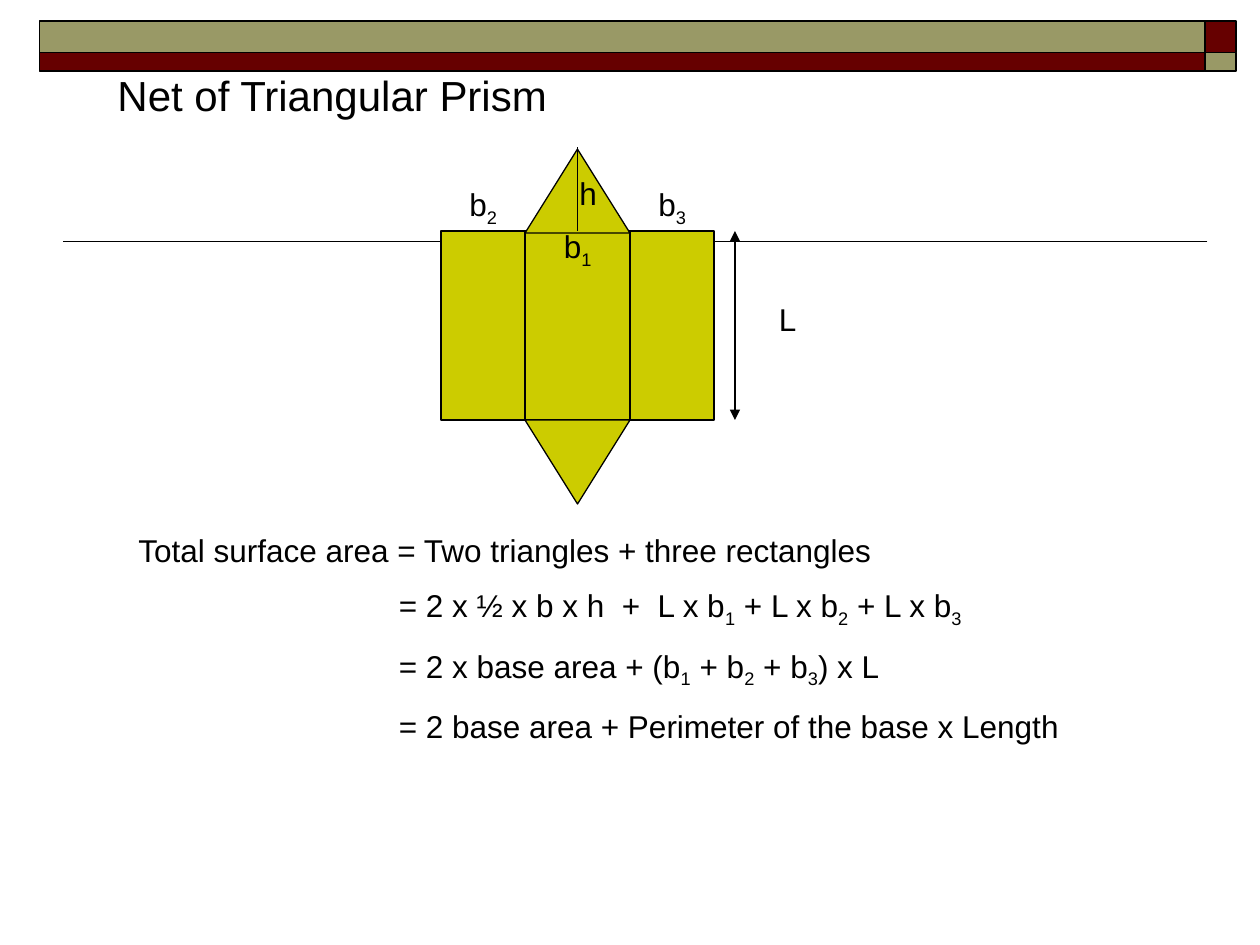
from dataclasses import dataclass

from lxml import etree
from pptx import Presentation
from pptx import util as u
from pptx.dml.color import RGBColor
from pptx.enum import shapes, text
from pptx.oxml import ns

COLS, ROWS = 120, 90
WIDTH, HEIGHT = u.Inches(10), u.Inches(7.5)
BLACK = RGBColor(0x00, 0x00, 0x00)
MAROON = RGBColor(0x66, 0x00, 0x00)
KHAKI = RGBColor(0x99, 0x99, 0x66)
YELLOW = RGBColor(0xCC, 0xCC, 0x00)
RECT = shapes.MSO_SHAPE.RECTANGLE
TRIANGLE = shapes.MSO_SHAPE.ISOSCELES_TRIANGLE


@dataclass(frozen=True)
class Face:
    """A filled outline placed in columns and rows."""
    col: float
    row: float
    cols: float
    rows: float
    color: RGBColor = YELLOW
    kind: shapes.MSO_SHAPE = RECT
    turn: float = 0
    line: float = 0.75


@dataclass(frozen=True)
class Line:
    """A straight line between two grid points."""
    start: tuple[float, float]
    end: tuple[float, float]
    weight: float = 0.75
    arrow: bool = False


@dataclass(frozen=True)
class Label:
    """A short caption with its left inset in columns."""
    words: str
    col: float
    row: float
    cols: float
    inset: float = 1.2


BANDS = [Face(col, row, cols, rows, color, line=1)
         for row, rows, colors in ((2, 3, (KHAKI, MAROON)), (5, 1.8, (MAROON, KHAKI)))
         for col, cols, color in zip((3.75, 114.75), (111, 3), colors)]
MIDDLE = Face(50, 22, 10, 18)
FACES = [Face(60, 22, 8, 18), Face(42, 22, 8, 18),
         Face(50, 14.2, 10, 8, kind=TRIANGLE),
         Face(50, 40, 10, 8, kind=TRIANGLE, turn=180)]
RULE = Line((115, 23), (6, 23), weight=1)
ALTITUDE = Line((55, 22), (55, 14))
ARROWS = [Line((70, 30), (70, 40), arrow=True), Line((70, 31), (70, 22), arrow=True)]
LABELS = [Label("L", 73, 28, 5), Label("b_1", 50, 21, 9, 3.7), Label("h", 54, 16, 5),
          Label("b_2", 41, 17, 9, 3.7), Label("b_3", 59, 17, 9, 3.7)]
FORMULA = ["Total surface area = Two triangles + three rectangles",
           "= 2 x ½ x b x h  +  L x b_1 + L x b_2 + L x b_3",
           "= 2 x base area + (b_1 + b_2 + b_3) x L",
           "= 2 base area + Perimeter of the base x Length"]


def x(cols: float) -> int:
    """Convert columns to a length."""
    return round(WIDTH * cols / COLS)


def y(rows: float) -> int:
    """Convert rows to a length."""
    return round(HEIGHT * rows / ROWS)


def draw_face(slide, face: Face):
    """Draw one face and return its shape."""
    sp = slide.shapes.add_shape(face.kind, x(face.col), y(face.row), x(face.cols), y(face.rows))
    sp.shadow.inherit = False
    sp.rotation = face.turn
    sp.fill.solid()
    sp.fill.fore_color.rgb = face.color
    sp.line.color.rgb = BLACK
    sp.line.width = u.Pt(face.line)
    return sp


def draw_line(slide, line: Line):
    """Draw one line, with an arrowhead at its end if asked."""
    (c1, r1), (c2, r2) = line.start, line.end
    sp = slide.shapes.add_connector(shapes.MSO_CONNECTOR.STRAIGHT, x(c1), y(r1), x(c2), y(r2))
    sp.line.color.rgb = BLACK
    sp.line.width = u.Pt(line.weight)
    if line.arrow:
        etree.SubElement(sp.line._get_or_add_ln(), ns.qn("a:tailEnd"), type="triangle")
    etree.SubElement(sp._element.spPr, ns.qn("a:effectLst"))
    return sp


def add_run(p, words: str, size: float, subscript: bool = False) -> None:
    """Append a run to a paragraph."""
    r = p.add_run()
    r.text = words
    r.font.name, r.font.size = "Arial", u.Pt(size)
    r.font.color.rgb = BLACK
    if subscript:
        r._r.get_or_add_rPr().set("baseline", "-25000")


def add_text(slide, lines: list[str], col: float, row: float, cols: float, rows: float, *,
             size: float = 18, inset: float = 1.2, indent: float = 0) -> None:
    """Add lines of text; an underscore lowers the next character, indent shifts later lines."""
    tf = slide.shapes.add_textbox(x(col), y(row), x(cols), y(rows)).text_frame
    tf.word_wrap = True
    tf.auto_size = text.MSO_AUTO_SIZE.SHAPE_TO_FIT_TEXT
    tf.margin_left = x(inset)
    for i, words in enumerate(lines):
        p = tf.add_paragraph() if i else tf.paragraphs[0]
        if i:
            p.space_before = u.Pt(size * 0.55)
            p._p.get_or_add_pPr().set("marL", str(x(indent)))
        head, *tails = words.split("_")
        add_run(p, head, size)
        for tail in tails:
            add_run(p, tail[0], size, subscript=True)
            if tail[1:]:
                add_run(p, tail[1:], size)


def main() -> None:
    """Build the slide and save it."""
    prs = Presentation()
    prs.slide_width, prs.slide_height = WIDTH, HEIGHT
    slide = prs.slides.add_slide(prs.slide_layouts[6])
    draw_line(slide, RULE)
    for band in BANDS:
        draw_face(slide, band)
    middle = draw_face(slide, MIDDLE)
    for face in FACES:
        draw_face(slide, face)
    add_text(slide, ["Net of Triangular Prism"], 10, 6, 74, 6, size=24)
    add_text(slide, FORMULA, 12, 50, 93, 26.5, indent=24.8)
    draw_line(slide, ALTITUDE).begin_connect(middle, 0)
    for arrow in ARROWS:
        draw_line(slide, arrow)
    for label in LABELS:
        add_text(slide, [label.words], label.col, label.row, label.cols, 4.8, inset=label.inset)
    prs.save("out.pptx")


if __name__ == "__main__":
    main()
